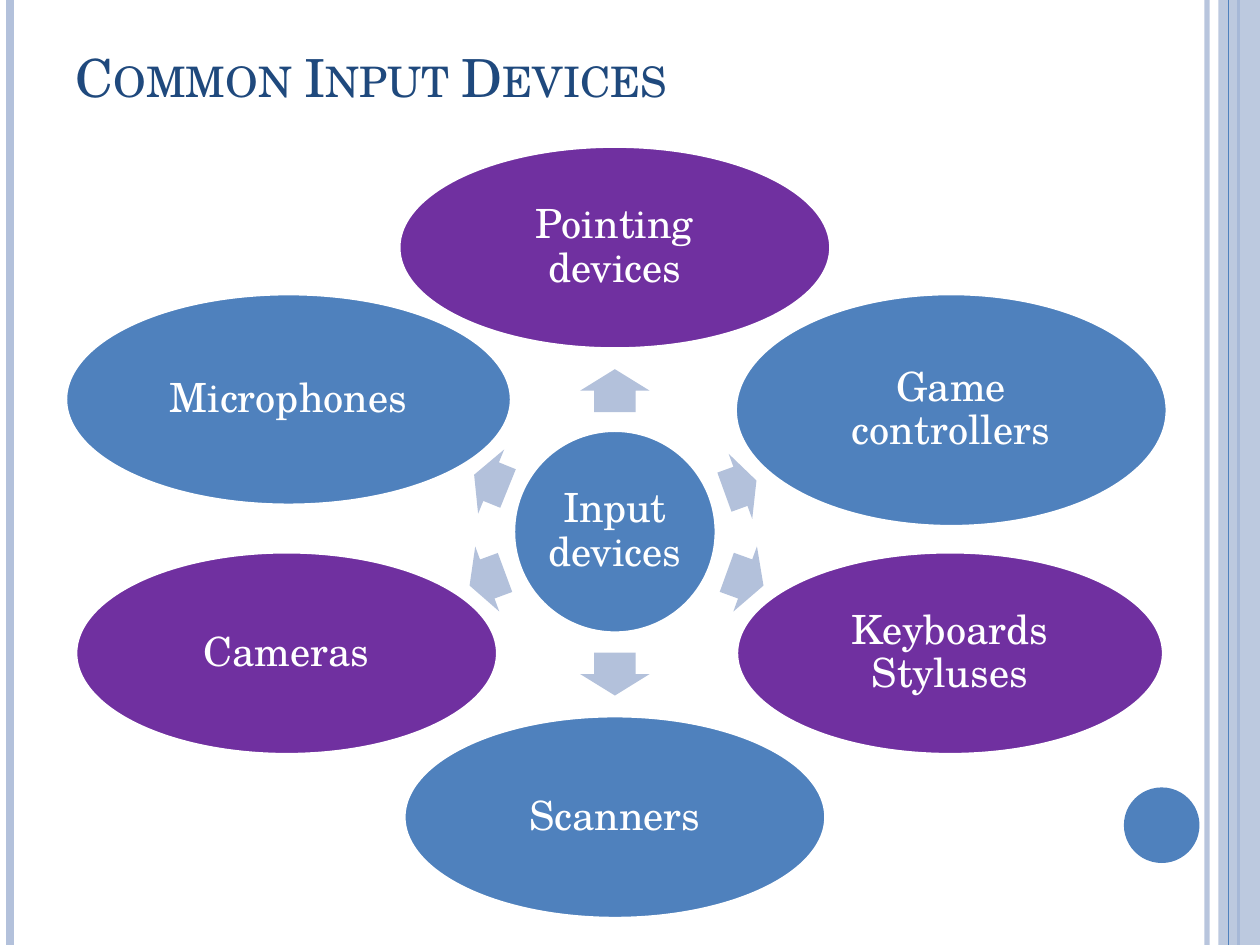
from dataclasses import dataclass
from math import atan2, cos, degrees, sin

from lxml.etree import SubElement
from pptx import Presentation
from pptx.dml.color import RGBColor
from pptx.enum.shapes import MSO_CONNECTOR, MSO_SHAPE
from pptx.enum.text import MSO_ANCHOR, MSO_AUTO_SIZE, PP_ALIGN
from pptx.oxml.ns import qn
from pptx.util import Inches, Pt

WIDTH, HEIGHT = 10, 7.5
FONT = "TeX Gyre Schola"
COLOURS = {"blue": "4F81BD", "purple": "7030A0", "pale": "B3C1DB",
           "navy": "1F497D", "white": "FFFFFF"}


# Positions and sizes are percentages of the slide's width and height
@dataclass
class Rail:
    x: float
    weight: float
    colour: str
    opacity: int = 100


@dataclass
class Device:
    label: str
    colour: str
    x: float
    y: float
    width: float
    height: float


@dataclass
class Spoke:
    device: Device
    reach: float  # inches from the hub's centre to the arrow's centre
    length: float  # inches


RAILS = [Rail(95.8, 3, "pale", 93), Rail(0.8, 4.5, "pale"),
         Rail(98.3, 1.5, "blue"), Rail(97.5, 0.75, "blue")]
HUB = Device("Input devices", "blue", 48.8, 56.27, 16.1, 21.47)
SPOKES = [
    Spoke(Device("Pointing devices", "purple", 48.8, 26.2, 34.3, 21.47), 1.12, 0.34),
    Spoke(Device("Game controllers", "blue", 75.5, 43.4, 34.3, 24.67), 1.06, 0.27),
    Spoke(Device("Keyboards Styluses", "purple", 75.4, 69.13, 33.9, 21.47), 1.1, 0.31),
    Spoke(Device("Scanners", "blue", 48.8, 86.47, 33.5, 21.47), 1.13, 0.34),
    Spoke(Device("Cameras", "purple", 22.75, 69.13, 33.5, 21.47), 1.08, 0.3),
    Spoke(Device("Microphones", "blue", 22.9, 42.27, 35.4, 22.4), 1.06, 0.29),
]
ARROW_BREADTH = 0.55
BUBBLE_FRAME = {"word_wrap": True, "vertical_anchor": MSO_ANCHOR.MIDDLE,
                **{f"margin_{side}": Inches(0.03)
                   for side in ("left", "right", "top", "bottom")}}
TITLE_FRAME = {"word_wrap": True, "vertical_anchor": MSO_ANCHOR.BOTTOM,
               "auto_size": MSO_AUTO_SIZE.NONE}


def across(share: float) -> float:
    return share / 100 * WIDTH


def down(share: float) -> float:
    return share / 100 * HEIGHT


def rgb(name: str) -> RGBColor:
    return RGBColor.from_string(COLOURS[name])


def apply(target, values: dict) -> None:
    for attribute, value in values.items():
        setattr(target, attribute, value)


def set_opacity(element, percent: int) -> None:
    colour = next(element.iter(qn("a:srgbClr")))
    SubElement(colour, qn("a:alpha"), val=str(percent * 1000))


def write(paragraph, text: str, size: float, colour: str, align):
    paragraph.alignment = align
    run = paragraph.add_run()
    run.text = text
    apply(run.font, {"name": FONT, "size": Pt(size), "bold": False})
    run.font.color.rgb = rgb(colour)
    return run


def add_centred(shapes, kind, x: float, y: float, width: float,
                height: float, colour: str):
    """Add a plain shape around a centre given in inches."""
    shape = shapes.add_shape(kind, Inches(x - width / 2), Inches(y - height / 2),
                             Inches(width), Inches(height))
    shape.shadow.inherit = False
    shape.fill.solid()
    shape.fill.fore_color.rgb = rgb(colour)
    shape.line.fill.background()
    return shape


def draw_rail(shapes, rail: Rail) -> None:
    x = Inches(across(rail.x))
    line = shapes.add_connector(MSO_CONNECTOR.STRAIGHT, x, 0, x, Inches(HEIGHT))
    line.line.color.rgb = rgb(rail.colour)
    line.line.width = Pt(rail.weight)
    properties = line._element.spPr
    if rail.opacity < 100:
        set_opacity(properties, rail.opacity)
    SubElement(properties, qn("a:effectLst"))


def draw_device(shapes, device: Device) -> None:
    bubble = add_centred(shapes, MSO_SHAPE.OVAL, across(device.x), down(device.y),
                         across(device.width), down(device.height), device.colour)
    bubble.line.color.rgb = rgb("white")
    bubble.line.width = Pt(2)
    apply(bubble.text_frame, BUBBLE_FRAME)
    paragraph = bubble.text_frame.paragraphs[0]
    paragraph.line_spacing = 0.9
    write(paragraph, device.label, 23, "white", PP_ALIGN.CENTER)


def draw_spoke(shapes, spoke: Spoke) -> None:
    hub_x, hub_y = across(HUB.x), down(HUB.y)
    angle = atan2(down(spoke.device.y) - hub_y, across(spoke.device.x) - hub_x)
    arrow = add_centred(shapes, MSO_SHAPE.RIGHT_ARROW,
                        hub_x + spoke.reach * cos(angle),
                        hub_y + spoke.reach * sin(angle),
                        spoke.length, ARROW_BREADTH, "pale")
    arrow.adjustments[0], arrow.adjustments[1] = 0.6, 0.5
    arrow.rotation = degrees(angle) % 360
    draw_device(shapes, spoke.device)


def draw_title(title) -> None:
    apply(title, {"left": Inches(across(5)), "top": Inches(down(-4.53)),
                  "width": Inches(across(90)), "height": Inches(down(16.67))})
    apply(title.text_frame, TITLE_FRAME)
    run = write(title.text_frame.paragraphs[0], "Common Input Devices", 30,
                "navy", PP_ALIGN.LEFT)
    run._r.get_or_add_rPr().set("cap", "small")


def main() -> None:
    deck = Presentation()
    deck.slide_width, deck.slide_height = Inches(WIDTH), Inches(HEIGHT)
    slide = deck.slides.add_slide(deck.slide_layouts[5])
    shapes = slide.shapes

    # Side rails, band and corner disc
    for rail in RAILS[:3]:
        draw_rail(shapes, rail)
    band = add_centred(shapes, MSO_SHAPE.RECTANGLE, across(98.35), down(50),
                       across(3.3), down(100), "pale")
    set_opacity(band._element.spPr, 87)
    draw_rail(shapes, RAILS[3])
    add_centred(shapes, MSO_SHAPE.OVAL, across(92.2), down(87.33),
                across(6), down(8), "blue")

    draw_title(shapes.title)

    # Hub with its radiating devices
    draw_device(shapes, HUB)
    for spoke in SPOKES:
        draw_spoke(shapes, spoke)

    deck.save("out.pptx")


if __name__ == "__main__":
    main()
